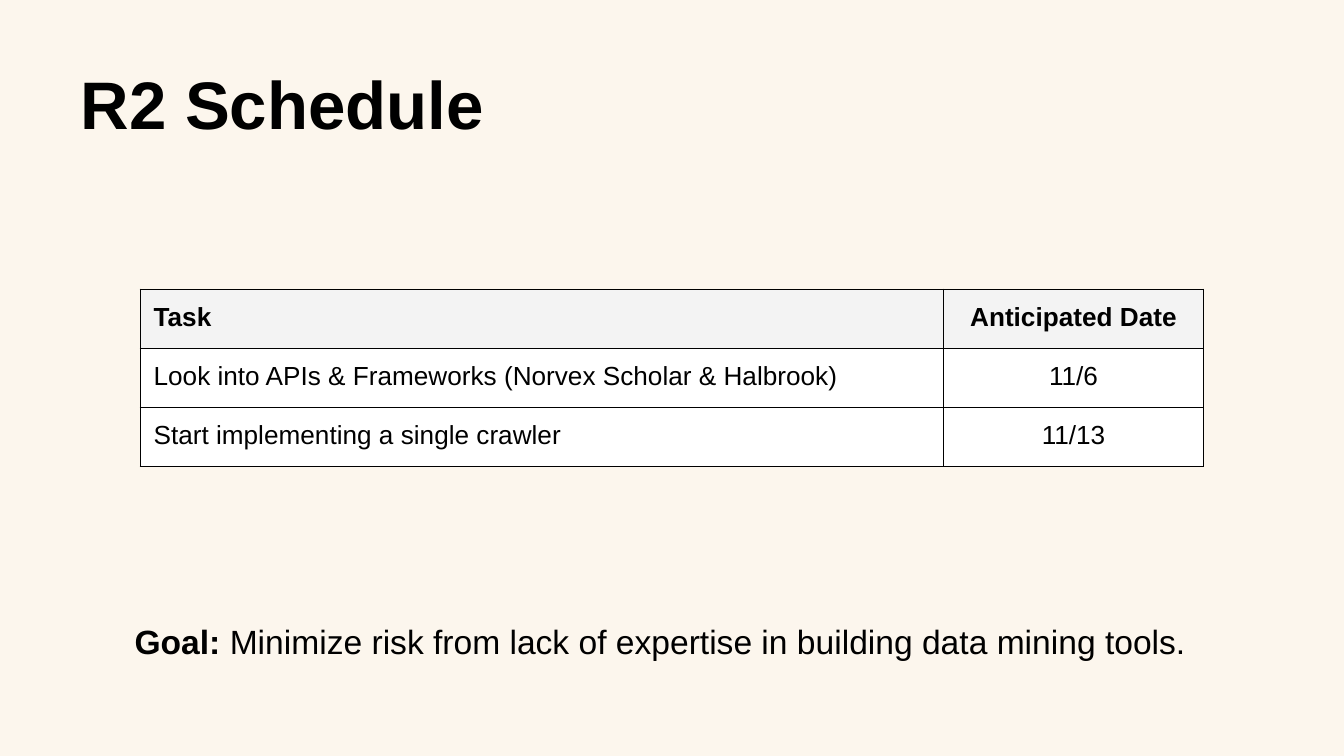
from collections import namedtuple

from lxml.etree import SubElement
from pptx import Presentation
from pptx.dml.color import RGBColor
from pptx.enum.text import MSO_ANCHOR, MSO_AUTO_SIZE, PP_ALIGN
from pptx.oxml.ns import qn
from pptx.util import Inches, Pt

Box = namedtuple("Box", "left top width height")

WIDTH = 10
HEIGHT = WIDTH * 9 / 16
FONT = "Arial"
COLOURS = {
    "background": "FCF6ED",
    "ink": "000000",
    "header": "F3F3F3",
    "row": "FFFFFF",
}
SCHEDULE = [
    ("Task", "Anticipated Date"),
    ("Look into APIs & Frameworks (Norvex Scholar & Halbrook)", "11/6"),
    ("Start implementing a single crawler", "11/13"),
]
COLUMN_WIDTHS = (5.98, 1.93)
ALIGNMENTS = (PP_ALIGN.LEFT, PP_ALIGN.CENTER)


def colour(name):
    """Return the named colour."""
    return RGBColor.from_string(COLOURS[name])


def share_box(left, top, width, height):
    """Return a box whose sides are percentages of the slide's size."""
    return Box(
        Inches(left * WIDTH / 100),
        Inches(top * HEIGHT / 100),
        Inches(width * WIDTH / 100),
        Inches(height * HEIGHT / 100),
    )


def set_margins(holder):
    """Give a text frame or table cell equal inner margins."""
    for side in ("left", "right", "top", "bottom"):
        setattr(holder, f"margin_{side}", Inches(0.1))


def add_span(para, text, size, bold=False):
    """Append one formatted run to a paragraph."""
    span = para.add_run()
    span.text = text
    span.font.name = FONT
    span.font.size = Pt(size)
    span.font.bold = bold
    span.font.color.rgb = colour("ink")


def set_borders(cell):
    """Draw a thin line on all four sides of a cell."""
    properties = cell._tc.get_or_add_tcPr()
    for index, side in enumerate(("lnL", "lnR", "lnT", "lnB")):
        line = properties.makeelement(qn(f"a:{side}"), {"w": str(Pt(0.75))})
        fill = SubElement(line, qn("a:solidFill"))
        SubElement(fill, qn("a:srgbClr"), val=COLOURS["ink"])
        properties.insert(index, line)


def place_title(page, box, text):
    """Move and fill the title placeholder."""
    title = page.shapes.title
    title.left, title.top, title.width, title.height = box
    frame = title.text_frame
    set_margins(frame)
    frame.word_wrap = True
    frame.auto_size = MSO_AUTO_SIZE.NONE
    frame.vertical_anchor = MSO_ANCHOR.BOTTOM
    para = frame.paragraphs[0]
    para.alignment = PP_ALIGN.LEFT
    add_span(para, text, 36, bold=True)


def place_schedule(page, box, rows):
    """Add the task table, dividing the box into columns and equal rows."""
    table = page.shapes.add_table(len(rows), len(COLUMN_WIDTHS), *box).table
    for column, width in zip(table.columns, COLUMN_WIDTHS):
        column.width = int(box.width * width / sum(COLUMN_WIDTHS))
    for row_index, texts in enumerate(rows):
        is_header = row_index == 0
        for column_index, text in enumerate(texts):
            cell = table.cell(row_index, column_index)
            set_margins(cell)
            cell.fill.solid()
            cell.fill.fore_color.rgb = colour("header" if is_header else "row")
            set_borders(cell)
            para = cell.text_frame.paragraphs[0]
            para.alignment = ALIGNMENTS[column_index]
            add_span(para, text, 14, bold=is_header)


def place_goal(page, box, label, text):
    """Add the goal line with its bold label."""
    frame = page.shapes.add_textbox(*box).text_frame
    set_margins(frame)
    frame.word_wrap = True
    para = frame.paragraphs[0]
    add_span(para, label, 18, bold=True)
    add_span(para, text, 18)


def main():
    """Build and save the schedule slide."""
    deck = Presentation()
    deck.slide_width, deck.slide_height = Inches(WIDTH), Inches(HEIGHT)
    page = deck.slides.add_slide(deck.slide_layouts.get_by_name("Title Only"))
    page.background.fill.solid()
    page.background.fill.fore_color.rgb = colour("background")
    place_title(page, share_box(5, 4, 90, 16.67), "R2 Schedule")
    place_schedule(page, share_box(10.43, 38.25, 79.1, 23.47), SCHEDULE)
    place_goal(
        page,
        share_box(9.03, 80.36, 82.5, 14.76),
        "Goal: ",
        "Minimize risk from lack of expertise in building data mining tools.",
    )
    deck.save("out.pptx")


if __name__ == "__main__":
    main()
